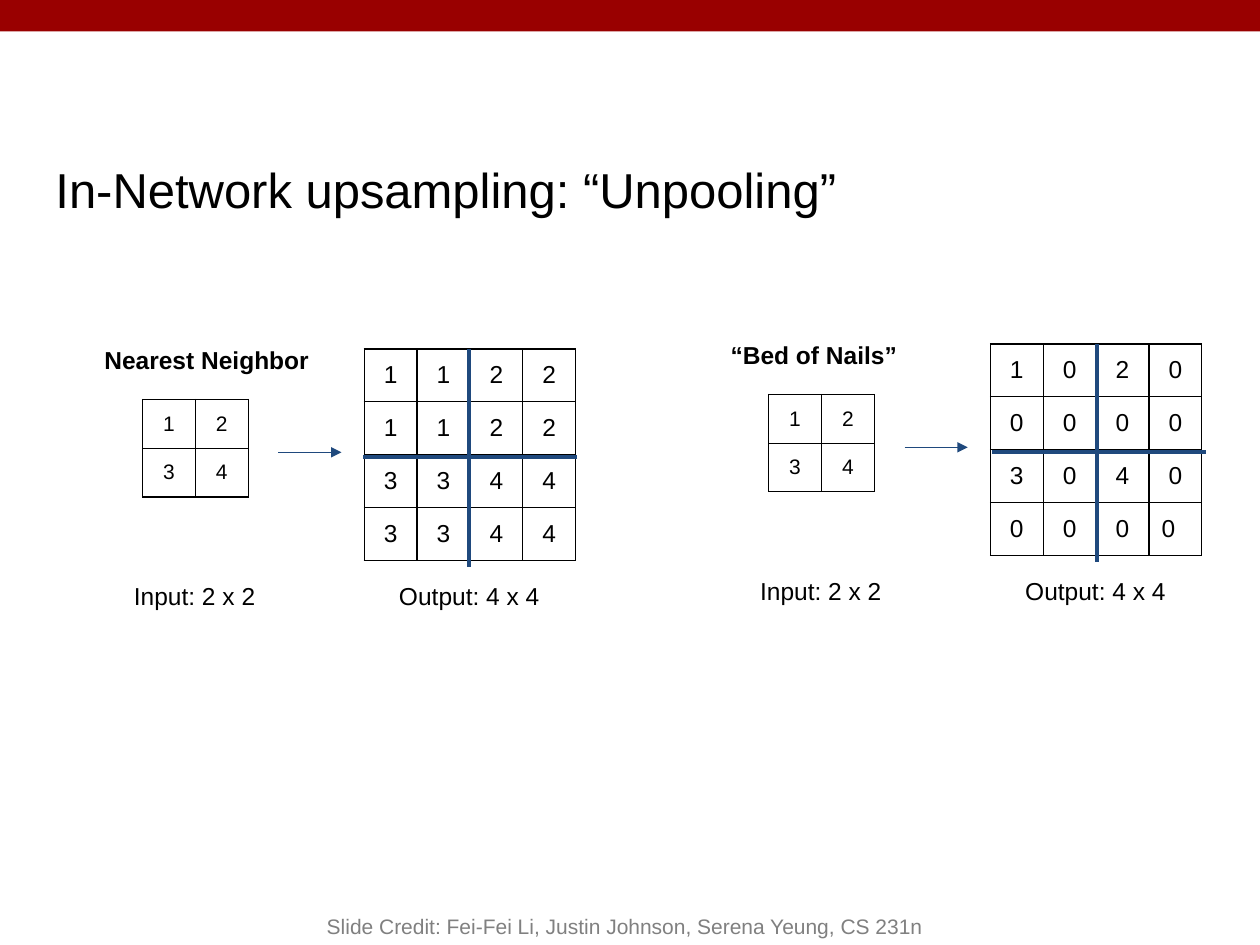
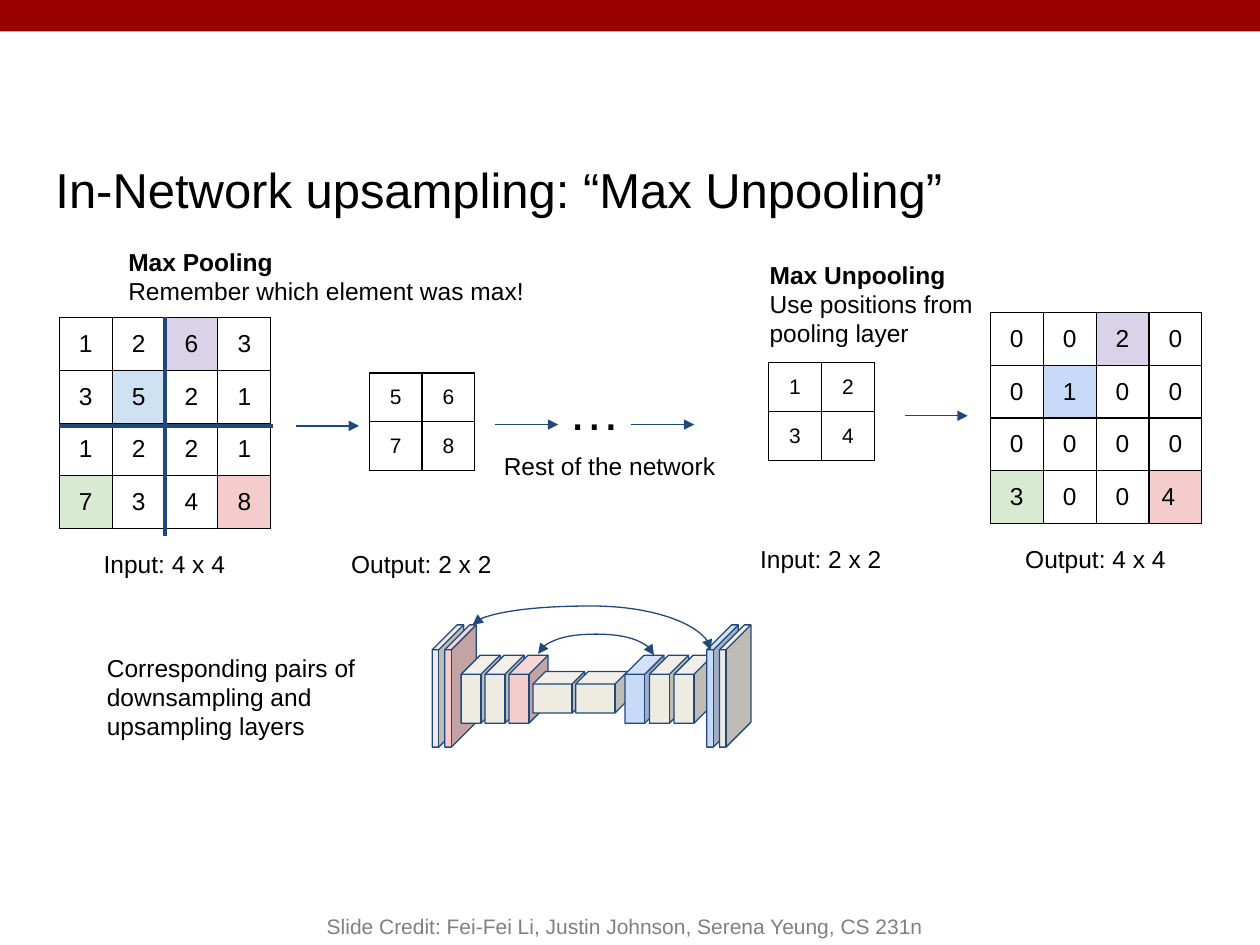
from lxml import etree
from pptx import Presentation
from pptx.dml.color import RGBColor
from pptx.enum.shapes import MSO_CONNECTOR as CONN, MSO_SHAPE as SHAPE
from pptx.enum.text import MSO_ANCHOR as ANCHOR, MSO_AUTO_SIZE as AUTO, PP_ALIGN as ALIGN
from pptx.oxml.ns import qn
from pptx.util import Inches, Pt

COLORS = {
    "band": "990000", "text": "000000", "credit": "808080", "line": "1F497D",
    "cream": "EEECE1", "pink": "F4CCCC", "blue": "C9DAF8",
    "sky": "CFE2F3", "lilac": "D9D2E9", "green": "D9EAD3",
}
FONT = "Arial"
CREDIT = "Slide Credit: Fei-Fei Li, Justin Johnson, Serena Yeung, CS 231n"
CELL_W, ROW_H = 0.42, 0.38
SMALL = ["12", "34"]


def rgb(name):
    return RGBColor.from_string(COLORS[name])


class Deck:
    def __init__(self):
        self.prs = Presentation()
        self.prs.slide_width, self.prs.slide_height = Inches(10), Inches(7.5)
        self.s = None

    def style(self, p, size, color="text", bold=False, align=ALIGN.LEFT):
        p.alignment = align
        p.font.name, p.font.size, p.font.bold = FONT, Pt(size), bold
        p.font.color.rgb = rgb(color)

    def frame(self, tf, inset=0.1, anchor=ANCHOR.TOP):
        tf.word_wrap, tf.auto_size = True, AUTO.NONE
        tf.vertical_anchor = anchor
        tf.margin_left = tf.margin_right = Inches(0.1)
        tf.margin_top = tf.margin_bottom = Inches(inset)

    def slide(self, title):
        """New slide with the band, title and credit line."""
        self.s = self.prs.slides.add_slide(self.prs.slide_layouts[5])
        self.shape(SHAPE.RECTANGLE, 0, 0, 10, 0.25, "band")
        sp = self.s.shapes.title
        sp.left, sp.top, sp.width, sp.height = map(Inches, (0.34, 1.03, 9, 0.94))
        self.frame(sp.text_frame, anchor=ANCHOR.MIDDLE)
        sp.text_frame.text = title
        self.style(sp.text_frame.paragraphs[0], 28)
        self.text(2, 7, 5.92, 0.5, CREDIT, 12, "credit", align=ALIGN.CENTER,
                  inset=0.05, anchor=ANCHOR.BOTTOM)

    def text(self, x, y, w, h, body="", size=14, color="text", heading=None,
             align=ALIGN.LEFT, inset=0.1, anchor=ANCHOR.TOP):
        """Text box with an optional bold first line."""
        sp = self.s.shapes.add_textbox(*map(Inches, (x, y, w, h)))
        tf = sp.text_frame
        self.frame(tf, inset, anchor)
        lines = [(t, b) for t, b in ((heading, True), (body, False)) if t]
        for i, (line, bold) in enumerate(lines):
            p = tf.add_paragraph() if i else tf.paragraphs[0]
            p.text = line
            self.style(p, size, color, bold, align)

    def caption(self, x, y, body):
        self.text(x, y, 1.67, 0.39, body, align=ALIGN.CENTER)

    def shape(self, kind, x, y, w, h, fill, line=None, adj=None):
        sp = self.s.shapes.add_shape(kind, *map(Inches, (x, y, w, h)))
        sp.shadow.inherit = False
        sp.fill.solid()
        sp.fill.fore_color.rgb = rgb(fill)
        if line:
            sp.line.color.rgb, sp.line.width = rgb(line), Pt(0.75)
        else:
            sp.line.fill.background()
        if adj is not None:
            sp.adjustments[0] = adj

    def line(self, x1, y1, x2, y2, width=2.25, ends=(), kind=CONN.STRAIGHT):
        c = self.s.shapes.add_connector(kind, *map(Inches, (x1, y1, x2, y2)))
        c.line.color.rgb, c.line.width = rgb("line"), Pt(width)
        spPr = c._element.spPr
        for end in ends:
            etree.SubElement(spPr.find(qn("a:ln")), qn(f"a:{end}"), type="triangle")
        etree.SubElement(spPr, qn("a:effectLst"))
        return c

    def arrow(self, x, y):
        self.line(x, y, x + 0.5, y, 0.75, ["tailEnd"])

    def arc(self, x1, y1, x2, y2, rise):
        """Two-headed curve above both ends: a connector turned by 270 degrees."""
        cx, cy, dx, dy = (x1 + x2) / 2, (y1 + y2) / 2, x2 - x1, y2 - y1
        c = self.line(cx + dy / 2, cy - dx / 2, cx - dy / 2, cy + dx / 2, 0.75,
                      ["headEnd", "tailEnd"], CONN.CURVE)
        spPr = c._element.spPr
        spPr.find(qn("a:xfrm")).set("rot", str(270 * 60000))
        guides = spPr.find(qn("a:prstGeom")).find(qn("a:avLst"))
        etree.SubElement(guides, qn("a:gd"), name="adj1",
                         fmla=f"val {round(-rise / dy * 100000)}")

    def grid(self, x, y, rows, fills=None, last_align=ALIGN.CENTER):
        """Square table of digits; fills maps (row, column) to a colour."""
        n = len(rows)
        size = 12 if n == 2 else 14
        gf = self.s.shapes.add_table(n, n, *map(Inches, (x, y, n * CELL_W, n * ROW_H)))
        table = gf.table
        table.first_row = table.horz_banding = False
        for i, row in enumerate(rows):
            table.rows[i].height = Inches(ROW_H)
            table.columns[i].width = Inches(CELL_W)
            for j, digit in enumerate(row):
                cell = table.cell(i, j)
                cell.margin_left = cell.margin_right = Inches(0.1)
                cell.margin_top = cell.margin_bottom = Inches(0.1)
                cell.text = digit
                last = i == j == n - 1
                self.style(cell.text_frame.paragraphs[0], size,
                           align=last_align if last else ALIGN.CENTER)
                self.borders(cell)
                if fills and (i, j) in fills:
                    cell.fill.solid()
                    cell.fill.fore_color.rgb = rgb(fills[i, j])
                else:
                    cell.fill.background()

    def borders(self, cell):
        tcPr = cell._tc.get_or_add_tcPr()
        for side in "LRTB":
            ln = etree.SubElement(tcPr, qn(f"a:ln{side}"), w=str(Pt(0.75)))
            fill = etree.SubElement(ln, qn("a:solidFill"))
            etree.SubElement(fill, qn("a:srgbClr"), val=COLORS["text"])

    def cross(self, x, y):
        """Thick lines that split a 4 x 4 grid into quarters."""
        self.line(x + 0.84, y, x + 0.84, y + 1.73)
        self.line(x + 1.7, y + 0.86, x, y + 0.86)

    def unpool(self, x, y, rows, fills=None, last_align=ALIGN.CENTER):
        """2 x 2 input, arrow and 4 x 4 output."""
        self.grid(x, y + 0.4, SMALL)
        self.arrow(x + 1.08, y + 0.82)
        self.grid(x + 1.76, y, rows, fills, last_align)
        self.caption(x - 0.42, y + 1.74, "Input: 2 x 2")
        self.caption(x + 1.76, y + 1.74, "Output: 4 x 4")


def unpooling(d):
    d.slide("In-Network upsampling: “Unpooling”")
    panels = [
        (1.13, 2.77, "Nearest Neighbor", ["1122", "1122", "3344", "3344"], ALIGN.CENTER, -0.01),
        (6.1, 2.73, "“Bed of Nails”", ["1020", "0000", "3040", "0000"], ALIGN.LEFT, 0.01),
    ]
    for x, y, heading, rows, last_align, shift in panels:
        d.unpool(x, y, rows, last_align=last_align)
        d.text(x - 0.4, y - 0.13, 2.16, 0.35, heading=heading)
        d.cross(x + 1.76 + shift, y)


def max_unpooling(d):
    d.slide("In-Network upsampling: “Max Unpooling”")

    # Max pooling
    d.text(0.92, 1.86, 3.73, 0.63, "Remember which element was max!", heading="Max Pooling")
    d.grid(0.47, 2.52, ["1263", "3521", "1221", "7348"],
           {(0, 2): "lilac", (1, 1): "sky", (3, 0): "green", (3, 3): "pink"})
    d.cross(0.47, 2.52)
    d.arrow(2.35, 3.38)
    d.grid(2.93, 2.96, ["56", "78"])
    d.caption(0.47, 4.26, "Input: 4 x 4")
    d.caption(2.51, 4.26, "Output: 2 x 2")

    # Rest of the network
    d.arrow(3.93, 3.37)
    d.text(4.41, 2.9, 0.68, 0.61, "…", 30)
    d.arrow(5.01, 3.37)
    d.text(3.9, 3.48, 1.94, 0.43, "Rest of the network")

    # Max unpooling
    d.unpool(6.1, 2.48, ["0020", "0100", "0000", "3004"],
             {(0, 2): "lilac", (1, 1): "blue", (3, 0): "green", (3, 3): "pink"}, ALIGN.LEFT)
    d.text(6.01, 1.96, 2.16, 0.35, "Use positions from pooling layer", heading="Max Unpooling")

    # Network layers: top, width, height and depth of each kind
    tall, medium, flat = (4.96, 0.25, 0.97, 0.79), (5.2, 0.31, 0.54, 0.49), (5.33, 0.41, 0.33, 0.3)
    layers = [
        (tall, 3.43, 0.1, ["cream", "pink"]),
        (medium, 3.66, 0.19, ["cream", "cream", "pink"]),
        (flat, 4.23, 0.34, ["cream", "cream"]),
        (medium, 4.96, 0.195, ["blue", "cream", "cream"]),
        (tall, 5.61, 0.1, ["blue", "cream"]),
    ]
    for (top, w, h, depth), left, step, fills in layers:
        for i, fill in enumerate(fills):
            d.shape(SHAPE.CUBE, left + i * step, top, w, h, fill, "line", depth)
    d.arc(4.27, 5.19, 5.19, 5.2, 0.16)
    d.arc(3.75, 4.96, 5.64, 5.16, 0.15)
    d.text(0.75, 5.08, 2.47, 0.63, "Corresponding pairs of downsampling and upsampling layers")


def main():
    d = Deck()
    unpooling(d)
    max_unpooling(d)
    d.prs.save("out.pptx")


if __name__ == "__main__":
    main()
